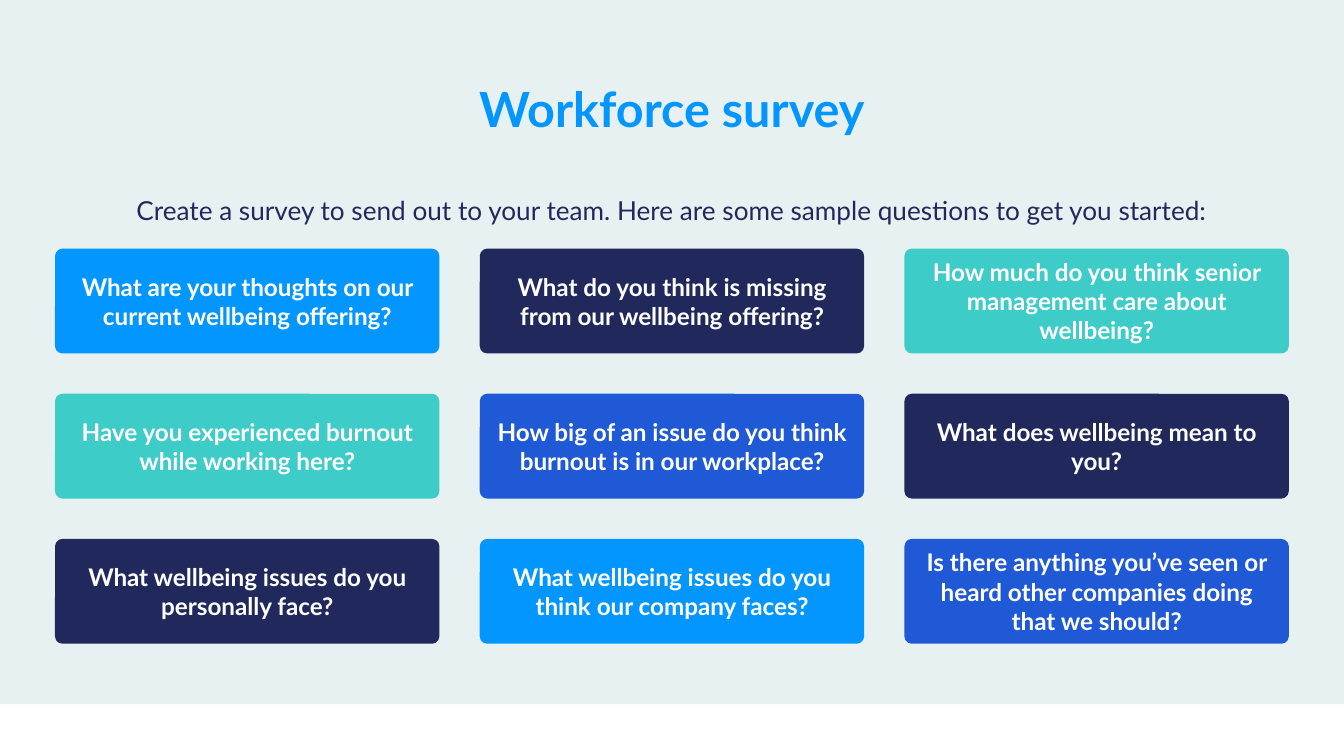
import pptx
import pptx.util
import pptx.dml.color
import pptx.enum.shapes
import pptx.enum.text

Inches = pptx.util.Inches
MSO_SHAPE = pptx.enum.shapes.MSO_SHAPE
ANCHOR = pptx.enum.text.MSO_ANCHOR

COLORS = {
    "panel": "E8F1F2",
    "sky": "0496FF",
    "navy": "21295C",
    "teal": "3DCCC7",
    "blue": "1F59D5",
    "white": "FFFFFF",
}

QUESTIONS = [
    [("What are your thoughts on our current wellbeing offering?", "sky"),
     ("What do you think is missing from our wellbeing offering?", "navy"),
     ("How much do you think senior management care about wellbeing?", "teal")],
    [("Have you experienced burnout while working here?", "teal"),
     ("How big of an issue do you think burnout is in our workplace?", "blue"),
     ("What does wellbeing mean to you?", "navy")],
    [("What wellbeing issues do you personally face?", "navy"),
     ("What wellbeing issues do you think our company faces?", "sky"),
     ("Is there anything you’ve seen or heard other companies doing that we should?", "blue")],
]

CARD_W, CARD_H, GAP = 2.86, 0.78, 0.3
GRID_LEFT, GRID_TOP = 0.41, 1.85


def rgb(name):
    return pptx.dml.color.RGBColor.from_string(COLORS[name])


def set_text(sp, text, size, color, bold=False, anchor=ANCHOR.TOP, spacing=1.0):
    tf = sp.text_frame
    tf.text = text
    tf.word_wrap = True
    tf.auto_size = pptx.enum.text.MSO_AUTO_SIZE.NONE
    tf.vertical_anchor = anchor
    tf.margin_left = tf.margin_right = tf.margin_top = tf.margin_bottom = Inches(0.1)
    p = tf.paragraphs[0]
    p.alignment = pptx.enum.text.PP_ALIGN.CENTER
    p.line_spacing = spacing
    font = p.runs[0].font
    font.name = "Lato"
    font.size = pptx.util.Pt(size)
    font.bold = bold
    font.color.rgb = rgb(color)


def add_block(s, kind, left, top, width, height, color):
    """Add a filled shape without line or shadow."""
    sp = s.shapes.add_shape(kind, Inches(left), Inches(top), Inches(width), Inches(height))
    sp.shadow.inherit = False
    sp.fill.solid()
    sp.fill.fore_color.rgb = rgb(color)
    sp.line.fill.background()
    return sp


def add_panel(s):
    """Add the tinted panel behind everything else."""
    panel = add_block(s, MSO_SHAPE.RECTANGLE, 0, 0, 10, 5.24, "panel")
    title = s.shapes.title
    title._element.addprevious(panel._element)


def add_title(s, text):
    title = s.shapes.title
    title.left, title.top = Inches(0.34), Inches(0.49)
    title.width, title.height = Inches(9.32), Inches(0.63)
    set_text(title, text, 26, "sky", bold=True)


def add_intro(s, text):
    sp = s.shapes.add_textbox(Inches(0.34), Inches(1.23), Inches(9.32), Inches(0.49))
    set_text(sp, text, 14, "navy", spacing=1.5)


def add_question_grid(s):
    for row, questions in enumerate(QUESTIONS):
        for col, (text, color) in enumerate(questions):
            left = GRID_LEFT + col * (CARD_W + GAP)
            top = GRID_TOP + row * (CARD_H + GAP)
            card = add_block(s, MSO_SHAPE.ROUNDED_RECTANGLE, left, top, CARD_W, CARD_H, color)
            card.adjustments[0] = 0.07
            set_text(card, text, 13, "white", bold=True, anchor=ANCHOR.MIDDLE)


def main():
    prs = pptx.Presentation()
    prs.slide_width = Inches(10)
    prs.slide_height = Inches(10 * 9 / 16)
    s = prs.slides.add_slide(prs.slide_layouts.get_by_name("Title Only"))
    add_panel(s)
    add_title(s, "Workforce survey")
    add_intro(s, "Create a survey to send out to your team. "
                 "Here are some sample questions to get you started:")
    add_question_grid(s)
    prs.save("out.pptx")


if __name__ == "__main__":
    main()
